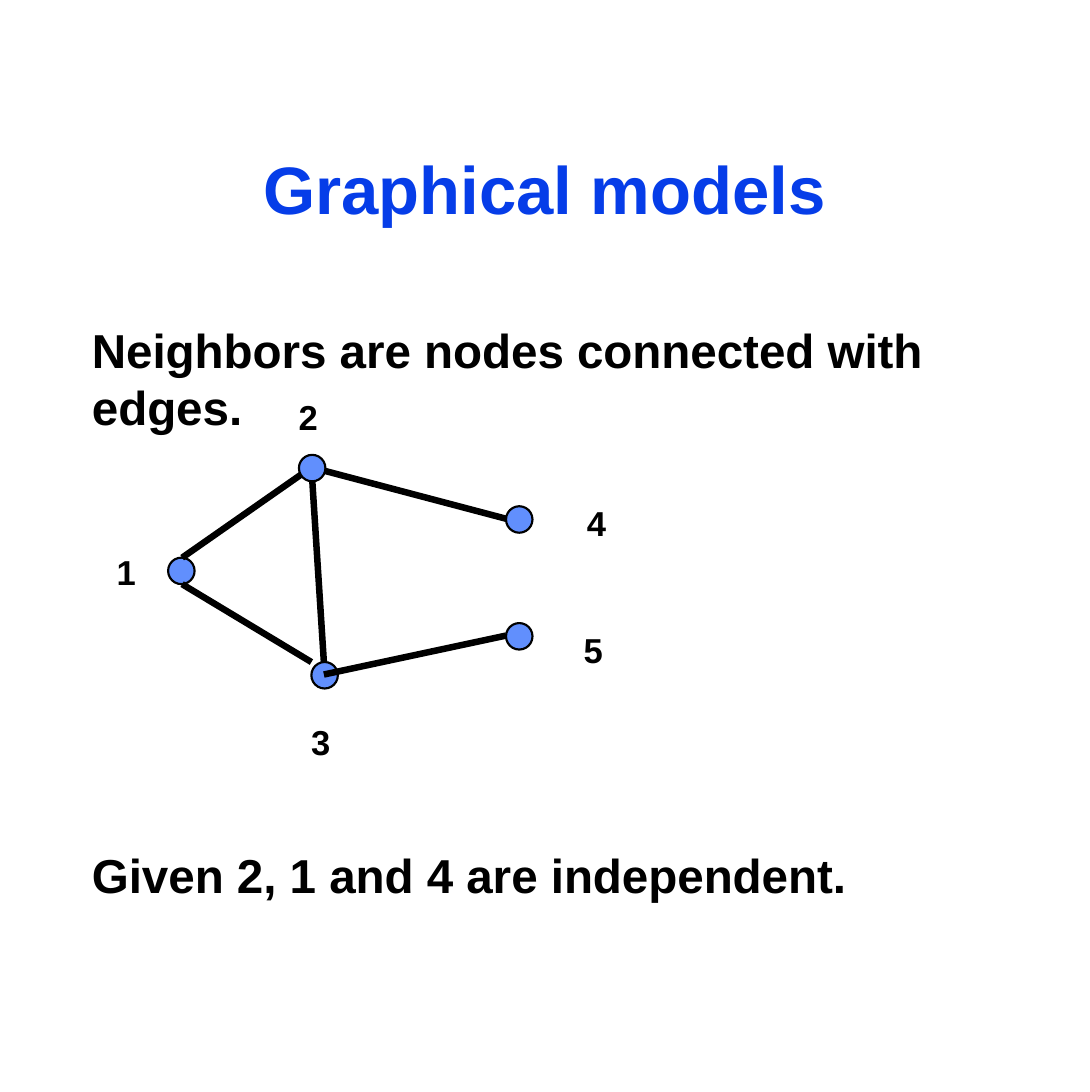
from lxml import etree
from pptx import Presentation, util as u
from pptx.dml.color import RGBColor
from pptx.enum import shapes, text
from pptx.oxml.ns import qn

NODE_SIZE = 0.17
NODES = {
    "1": (1.08, 3.58),
    "2": (1.92, 2.92),
    "3": (2, 4.25),
    "4": (3.25, 3.25),
    "5": (3.25, 4),
}
EDGES = [
    ((1.17, 3.58), (2, 3)),
    ((1.17, 3.75), (2, 4.25)),
    ((2, 3), (2.08, 4.25)),
    ((2, 3), (3.25, 3.33)),
    ((2.08, 4.33), (3.25, 4.08)),
]
LABELS = {
    "1": (0.65, 3.49),
    "2": (1.82, 2.49),
    "3": (1.9, 4.58),
    "4": (3.67, 3.17),
    "5": (3.65, 3.99),
}


def colour(value):
    return RGBColor.from_string(value)


class GraphSlide:
    """Holds the style and the page, and draws text, nodes and edges."""

    font = "Arial"
    ink = "000000"
    accent = "063DE8"
    node_fill = "618FFD"

    def __init__(self, page):
        self.page = page

    def add_run(self, para, words, size, ink):
        span = para.add_run()
        span.text = words
        span.font.name = self.font
        span.font.size = u.Pt(size)
        span.font.bold = True
        span.font.color.rgb = colour(ink)

    def add_box(self, left, top, width, height):
        return self.page.shapes.add_textbox(*map(u.Inches, (left, top, width, height)))

    def add_block(self, top, height):
        frame = self.add_box(0.52, top, 5.95, height).text_frame
        frame.word_wrap = True
        frame.margin_left = frame.margin_right = u.Inches(0.07)
        frame.margin_top = frame.margin_bottom = u.Inches(0.03)
        return frame

    def title(self, words):
        frame = self.add_block(0.62, 1.17)
        frame.vertical_anchor = text.MSO_ANCHOR.MIDDLE
        para = frame.paragraphs[0]
        para.alignment = text.PP_ALIGN.CENTER
        self.add_run(para, words, 31, self.accent)

    def body(self, statements):
        frame = self.add_block(2.03, 4.2)
        for index, (words, gap) in enumerate(statements):
            para = frame.add_paragraph() if index else frame.paragraphs[0]
            para.space_before = u.Pt(gap)
            self.add_run(para, words, 22, self.ink)

    def label(self, words, left, top):
        frame = self.add_box(left, top, 0.32, 0.37).text_frame
        frame.word_wrap = False
        frame.auto_size = text.MSO_AUTO_SIZE.SHAPE_TO_FIT_TEXT
        self.add_run(frame.paragraphs[0], words, 16, self.ink)

    def node(self, left, top):
        dot = self.page.shapes.add_shape(
            shapes.MSO_SHAPE.OVAL,
            *map(u.Inches, (left, top, NODE_SIZE, NODE_SIZE)),
        )
        dot.shadow.inherit = False
        dot.fill.solid()
        dot.fill.fore_color.rgb = colour(self.node_fill)
        dot.line.color.rgb = colour(self.ink)
        dot.line.width = u.Pt(1)

    def edge(self, start, end):
        link = self.page.shapes.add_connector(
            shapes.MSO_CONNECTOR.STRAIGHT, *map(u.Inches, start + end)
        )
        link.line.color.rgb = colour(self.ink)
        link.line.width = u.Pt(3)
        etree.SubElement(link._element.spPr, qn("a:effectLst"))


def main():
    deck = Presentation()
    deck.slide_width, deck.slide_height = u.Inches(7), u.Inches(7.01)
    graph = GraphSlide(deck.slides.add_slide(deck.slide_layouts[6]))

    graph.title("Graphical models")
    graph.body([
        ("Neighbors are nodes connected with edges.", 4.4),
        ("Given 2, 1 and 4 are independent.", 190),
    ])
    for name in "134":
        graph.node(*NODES[name])
    for start, end in EDGES:
        graph.edge(start, end)
    for name in "25":
        graph.node(*NODES[name])
    for name, place in LABELS.items():
        graph.label(name, *place)

    deck.save("out.pptx")


if __name__ == "__main__":
    main()
